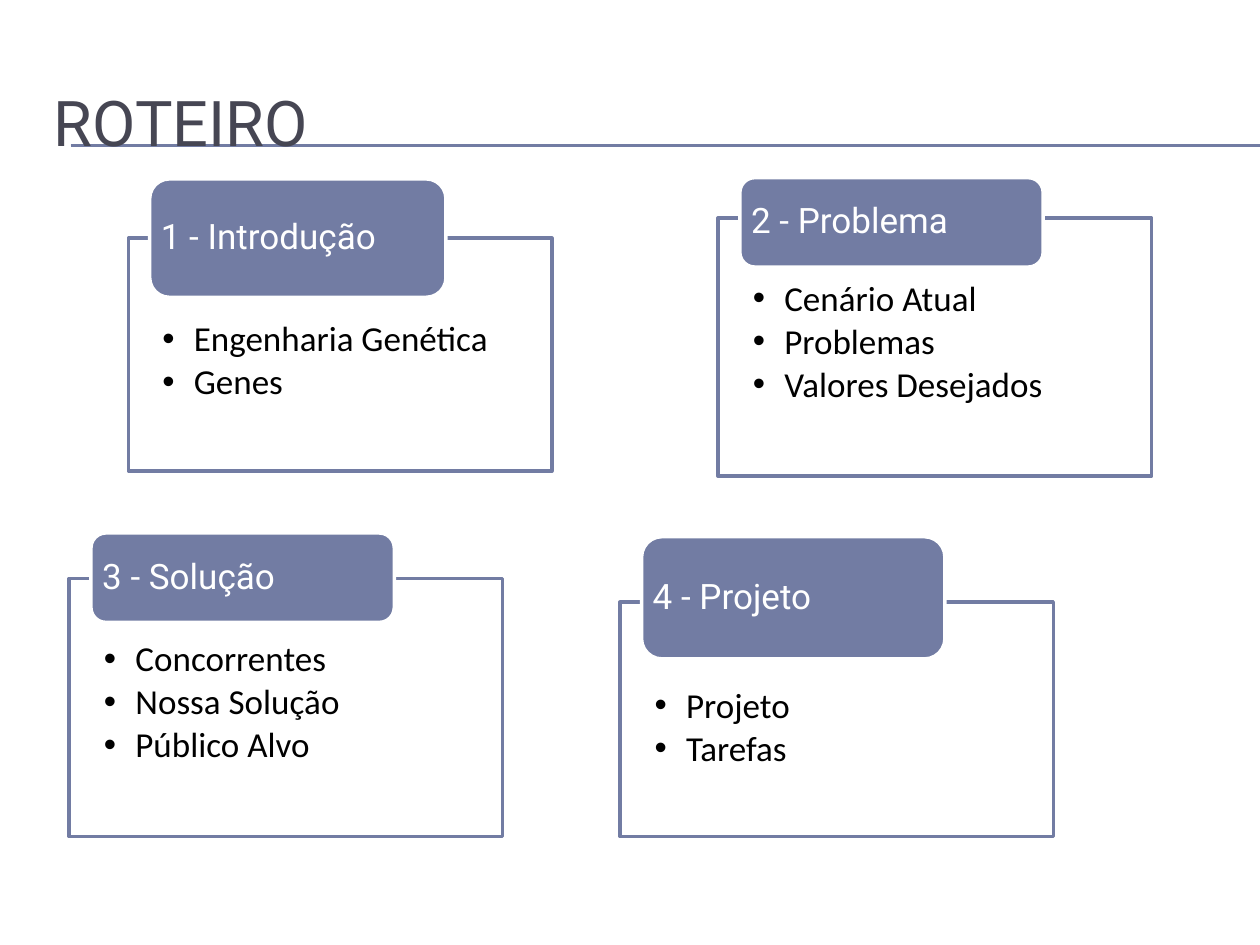
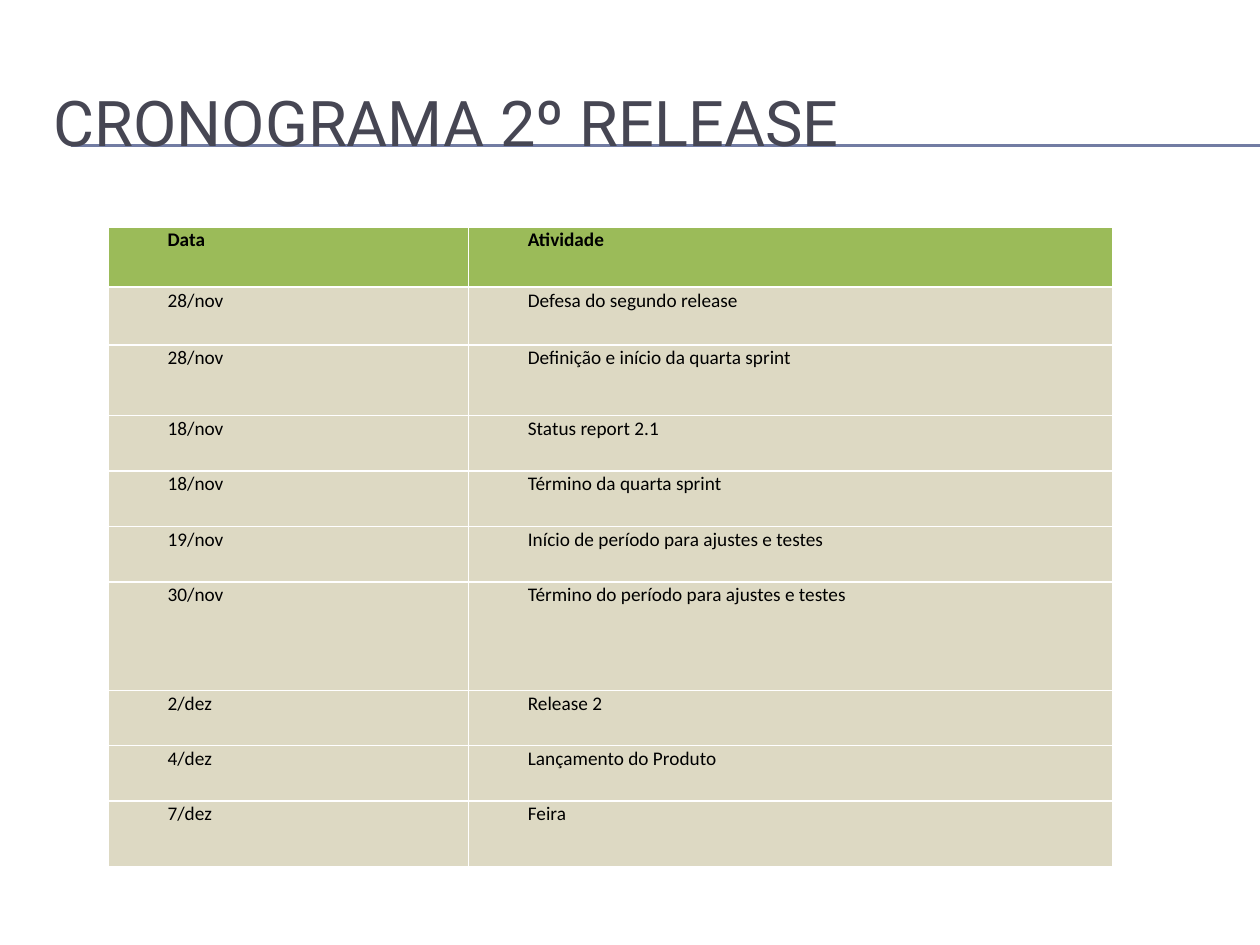
from dataclasses import dataclass

from lxml.etree import SubElement
from pptx import Presentation
from pptx.dml.color import RGBColor
from pptx.enum.shapes import MSO_CONNECTOR, MSO_SHAPE
from pptx.enum.text import MSO_ANCHOR, PP_ALIGN
from pptx.oxml.ns import qn
from pptx.util import Emu, Inches, Pt

SLATE = RGBColor(0x72, 0x7C, 0xA3)
CHARCOAL = RGBColor(0x46, 0x46, 0x53)
GREEN = RGBColor(0x9B, 0xBB, 0x59)
SAND = RGBColor(0xDD, 0xD9, 0xC3)
WHITE = RGBColor(0xFF, 0xFF, 0xFF)
BLACK = RGBColor(0x00, 0x00, 0x00)

HEADING_FONT = "Roboto"
BODY_FONT = "Calibri"

# The page is a grid of 100 columns by 75 rows with square cells.
COLUMNS, ROWS = 100, 75
CELL = Inches(0.1)

TAB_INSET = 0.9
CORNER_INSET = 0.05  # share of a rounded tab's height that its corners take from the text
PANEL_INDENT = 0.05  # shares of a panel's width
TAB_SHARE = 0.7
PANEL_PADDING = 0.08


@dataclass(frozen=True)
class Panel:
    heading: str
    topics: tuple[str, ...]
    left: float
    top: float
    width: float
    height: float
    tab_top: float
    tab_height: float
    text_top: float


@dataclass(frozen=True)
class Activity:
    date: str
    name: str
    height: float


PANELS = (
    Panel("1 - Introdução", ("Engenharia Genética", "Genes"),
          10.2, 18.9, 33.6, 18.5, 14.2, 9.4, 6.6),
    Panel("2 - Problema", ("Cenário Atual", "Problemas", "Valores Desejados"),
          57, 17.3, 34.4, 20.5, 14.1, 7.1, 5),
    Panel("3 - Solução", ("Concorrentes", "Nossa Solução", "Público Alvo"),
          5.5, 45.9, 34.4, 20.5, 42.3, 7.1, 5),
    Panel("4 - Projeto", ("Projeto", "Tarefas"),
          49.2, 47.8, 34.4, 18.6, 42.6, 9.7, 6.8),
)

SCHEDULE = (
    Activity("Data", "Atividade", 4.8),
    Activity("28/nov", "Defesa do segundo release", 4.6),
    Activity("28/nov", "Definição e início da quarta sprint", 5.6),
    Activity("18/nov", "Status report 2.1", 4.4),
    Activity("18/nov", "Término da quarta sprint", 4.4),
    Activity("19/nov", "Início de período para ajustes e testes", 4.4),
    Activity("30/nov", "Término do período para ajustes e testes", 8.6),
    Activity("2/dez", "Release 2", 4.4),
    Activity("4/dez", "Lançamento do Produto", 4.4),
    Activity("7/dez", "Feira", 5.2),
)
SCHEDULE_COLUMNS = (28.6, 51.1)


def grid(units: float) -> Emu:
    return Emu(round(units * CELL))


def area(left: float, top: float, width: float, height: float) -> tuple[Emu, ...]:
    return tuple(grid(units) for units in (left, top, width, height))


def set_margins(holder, left: float, top: float, right: float, bottom: float) -> None:
    """Set the inner margins of a text frame or a table cell."""
    holder.margin_left, holder.margin_top = grid(left), grid(top)
    holder.margin_right, holder.margin_bottom = grid(right), grid(bottom)


def add_bullet(para, indent: float) -> None:
    properties = para._p.get_or_add_pPr()
    properties.set("marL", str(grid(indent)))
    properties.set("indent", str(-grid(indent)))
    SubElement(properties, qn("a:buFont"), typeface="Arial")
    SubElement(properties, qn("a:buChar"), char="•")


def write(frame, *lines: str, size: float, color: RGBColor, font: str = BODY_FONT,
          bold: bool = False, bullet: bool = False, line_spacing: float = 1.0,
          space_after: float = 0, anchor: MSO_ANCHOR = MSO_ANCHOR.TOP) -> None:
    frame.word_wrap = True
    frame.vertical_anchor = anchor
    for index, line in enumerate(lines):
        para = frame.add_paragraph() if index else frame.paragraphs[0]
        if bullet:
            add_bullet(para, 2.5)
        para.alignment = PP_ALIGN.LEFT
        para.line_spacing = line_spacing
        para.space_after = Pt(space_after)
        span = para.add_run()
        span.text = line
        span.font.name, span.font.size, span.font.bold = font, Pt(size), bold
        span.font.color.rgb = color


def add_block(page, kind: MSO_SHAPE, place: tuple[Emu, ...], fill: RGBColor,
              line: RGBColor, opacity: int = 100):
    block = page.shapes.add_shape(kind, *place)
    block.shadow.inherit = False
    block.fill.solid()
    block.fill.fore_color.rgb = fill
    block.line.color.rgb = line
    block.line.width = Pt(2)
    if opacity < 100:
        fill_color = block.element.spPr.find(qn("a:solidFill"))[0]
        SubElement(fill_color, qn("a:alpha"), val=str(opacity * 1000))
    return block


def add_rule(page, top: float) -> None:
    rule = page.shapes.add_connector(
        MSO_CONNECTOR.STRAIGHT, grid(5.6), grid(top), grid(COLUMNS), grid(top))
    rule.line.color.rgb = SLATE
    rule.line.width = Pt(0.75)
    SubElement(rule.element.spPr, qn("a:effectLst"))


def add_page(deck, title: str):
    """Add a blank page with the double rule and the title."""
    page = deck.slides.add_slide(deck.slide_layouts[6])
    for top in (11.5, 11.6):
        add_rule(page, top)
    box = page.shapes.add_textbox(*area(3.3, 5, 95, 9.2))
    write(box.text_frame, title, size=36, color=CHARCOAL, font=HEADING_FONT,
          anchor=MSO_ANCHOR.MIDDLE)
    return page


def add_panel(page, panel: Panel) -> None:
    """Draw a bulleted frame with its heading tab over the top edge."""
    place = area(panel.left, panel.top, panel.width, panel.height)
    body = add_block(page, MSO_SHAPE.RECTANGLE, place, WHITE, SLATE, opacity=90)
    padding = PANEL_PADDING * panel.width
    set_margins(body.text_frame, padding, panel.text_top, padding, 1.6)
    write(body.text_frame, *panel.topics, size=20, color=BLACK, bullet=True,
          line_spacing=0.9, space_after=3)

    place = area(panel.left + PANEL_INDENT * panel.width, panel.tab_top,
                 TAB_SHARE * panel.width, panel.tab_height)
    tab = add_block(page, MSO_SHAPE.ROUNDED_RECTANGLE, place, SLATE, WHITE)
    inset = TAB_INSET - CORNER_INSET * panel.tab_height
    set_margins(tab.text_frame, inset, 0, inset, 0)
    write(tab.text_frame, panel.heading, size=20, color=WHITE, font=HEADING_FONT,
          line_spacing=0.9, anchor=MSO_ANCHOR.MIDDLE)


def add_border(cell, edge: str, width: float) -> None:
    line = SubElement(cell._tc.get_or_add_tcPr(), qn(f"a:ln{edge}"), w=str(Pt(width)))
    fill = SubElement(line, qn("a:solidFill"))
    SubElement(fill, qn("a:srgbClr"), val=str(WHITE))


def add_schedule(page, activities: tuple[Activity, ...]) -> None:
    place = area(8.6, 18, sum(SCHEDULE_COLUMNS), sum(item.height for item in activities))
    table = page.shapes.add_table(len(activities), len(SCHEDULE_COLUMNS), *place).table
    for column, width in zip(table.columns, SCHEDULE_COLUMNS):
        column.width = grid(width)
    for index, (row, activity) in enumerate(zip(table.rows, activities)):
        row.height = grid(activity.height)
        is_header = index == 0
        widths = {"L": 1, "R": 1, "T": 1.5 if index == 1 else 1, "B": 1.5 if is_header else 1}
        for cell, text in zip(row.cells, (activity.date, activity.name)):
            set_margins(cell, 4.7, 0.1, 0.1, 0)
            for edge, width in widths.items():
                add_border(cell, edge, width)
            cell.fill.solid()
            cell.fill.fore_color.rgb = GREEN if is_header else SAND
            write(cell.text_frame, text, size=11, color=BLACK, bold=is_header)


def main() -> None:
    deck = Presentation()
    deck.slide_width, deck.slide_height = grid(COLUMNS), grid(ROWS)

    outline = add_page(deck, "ROTEIRO")
    for panel in PANELS:
        add_panel(outline, panel)

    timeline = add_page(deck, "CRONOGRAMA 2º RELEASE")
    add_schedule(timeline, SCHEDULE)

    deck.save("out.pptx")


if __name__ == "__main__":
    main()
